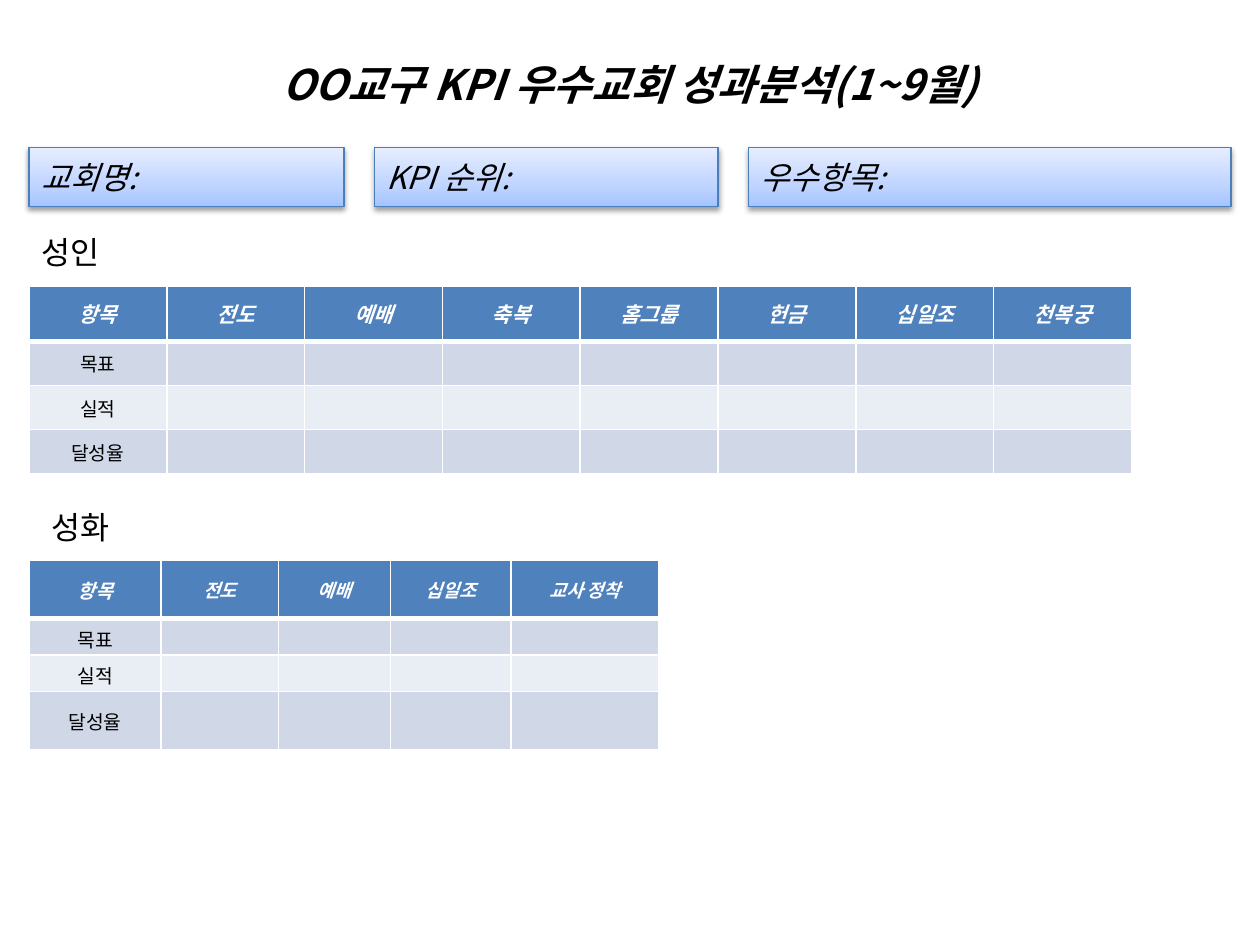
from lxml import etree
from pptx import Presentation
from pptx.dml.color import RGBColor
from pptx.enum import shapes, text
from pptx.oxml import parse_xml
from pptx.oxml import ns
from pptx.util import Pt

FONT = "Noto Sans CJK KR"
BLACK = RGBColor(0x00, 0x00, 0x00)
WHITE = RGBColor(0xFF, 0xFF, 0xFF)
BLUE = RGBColor(0x4F, 0x81, 0xBD)
OUTLINE = RGBColor(0x4B, 0x7E, 0xBC)
BAND_DARK = RGBColor(0xD0, 0xD8, 0xE8)
BAND_LIGHT = RGBColor(0xE9, 0xED, 0xF4)
GRADIENT = (
    (0, RGBColor(0xA4, 0xC4, 0xFF)),
    (35, RGBColor(0xBF, 0xD4, 0xFF)),
    (100, RGBColor(0xE6, 0xEE, 0xFF)),
)

LEFT = 16.56
BOX_GAP = 17.28
ROW_LABELS = ("목표", "실적", "달성율")


def write(tf, content, size=18, color=BLACK, bold=False, italic=False,
          align=text.PP_ALIGN.LEFT, anchor=text.MSO_ANCHOR.MIDDLE):
    tf.word_wrap = True
    tf.vertical_anchor = anchor
    p = tf.paragraphs[0]
    p.alignment = align
    r = p.add_run()
    r.text = content
    f = r.font
    f.name, f.size, f.bold, f.italic = FONT, Pt(size), bold, italic
    f.color.rgb = color
    ea = etree.SubElement(r._r.get_or_add_rPr(), ns.qn("a:ea"))
    ea.set("typeface", FONT)


def add_label(slide, content, x, y, w, h, **fmt):
    tb = slide.shapes.add_textbox(Pt(x), Pt(y), Pt(w), Pt(h))
    write(tb.text_frame, content, **fmt)


def style_box(sp):
    """Give a box its upward gradient and soft shadow below."""
    sp.fill.background()
    stops = "".join(
        f'<a:gs pos="{pos * 1000}"><a:srgbClr val="{color}"/></a:gs>'
        for pos, color in GRADIENT)
    grad = parse_xml(
        f'<a:gradFill {ns.nsdecls("a")} rotWithShape="1"><a:gsLst>{stops}</a:gsLst>'
        '<a:lin ang="16200000" scaled="0"/></a:gradFill>')
    spPr = sp._element.spPr
    spPr.replace(spPr.find(ns.qn("a:noFill")), grad)
    sp.line.color.rgb = OUTLINE
    sp.line.width = Pt(0.75)
    sp.shadow.inherit = False
    effects = spPr.find(ns.qn("a:effectLst"))
    effects.append(parse_xml(
        f'<a:outerShdw {ns.nsdecls("a")} blurRad="{Pt(3.1)}" dist="{Pt(1.6)}" '
        'dir="5400000" rotWithShape="0"><a:srgbClr val="000000">'
        '<a:alpha val="38000"/></a:srgbClr></a:outerShdw>'))


def add_info_box(slide, content, x, w):
    sp = slide.shapes.add_shape(
        shapes.MSO_SHAPE.RECTANGLE, Pt(x), Pt(84.24), Pt(w), Pt(33.84))
    style_box(sp)
    write(sp.text_frame, content, italic=True)


def set_borders(cell, top=1, bottom=1):
    tcPr = cell._tc.get_or_add_tcPr()
    for side, width in (("L", 1), ("R", 1), ("T", top), ("B", bottom)):
        tcPr.append(parse_xml(
            f'<a:ln{side} {ns.nsdecls("a")} w="{Pt(width)}"><a:solidFill>'
            f'<a:srgbClr val="{WHITE}"/></a:solidFill></a:ln{side}>'))


def add_score_table(slide, y, headers, header_sizes, widths, heights):
    frame = slide.shapes.add_table(
        len(heights), len(widths), Pt(LEFT), Pt(y), Pt(sum(widths)), Pt(sum(heights)))
    table = frame.table
    for column, w in zip(table.columns, widths):
        column.width = Pt(w)
    for row, h in zip(table.rows, heights):
        row.height = Pt(h)

    for c, (header, size) in enumerate(zip(headers, header_sizes)):
        cell = table.cell(0, c)
        set_borders(cell, bottom=3)
        cell.fill.solid()
        cell.fill.fore_color.rgb = BLUE
        cell.vertical_anchor = text.MSO_ANCHOR.MIDDLE
        write_cell(cell, header, size=size, color=WHITE, bold=True, italic=True)

    for r, label in enumerate(ROW_LABELS, 1):
        for c in range(len(headers)):
            cell = table.cell(r, c)
            set_borders(cell, top=3 if r == 1 else 1)
            cell.fill.solid()
            cell.fill.fore_color.rgb = BAND_DARK if r % 2 else BAND_LIGHT
            if c == 0:
                write_cell(cell, label, size=11)
            else:
                end = etree.SubElement(
                    cell.text_frame.paragraphs[0]._p, ns.qn("a:endParaRPr"))
                end.set("sz", "1100")


def write_cell(cell, content, **fmt):
    write(cell.text_frame, content, align=text.PP_ALIGN.CENTER, **fmt)
    cell.vertical_anchor = text.MSO_ANCHOR.MIDDLE


def main():
    prs = Presentation()
    prs.slide_width, prs.slide_height = Pt(720), Pt(540)
    slide = prs.slides.add_slide(prs.slide_layouts[6])

    add_label(slide, "OO교구 KPI 우수교회 성과분석(1~9월)", 36, 21.6, 648, 51.84,
              size=24, bold=True, italic=True, align=text.PP_ALIGN.CENTER)

    x = LEFT
    for content, w in (("교회명:", 180), ("KPI 순위:", 196.56), ("우수항목:", 275.76)):
        add_info_box(slide, content, x, w)
        x += w + BOX_GAP

    add_score_table(
        slide, 163.44,
        ("항목", "전도", "예배", "축복", "홈그룹", "헌금", "십일조", "천복궁"),
        [12] * 8, [78.75] * 8, (31.68, 25.2, 25.2, 25.2))
    add_score_table(
        slide, 320.4,
        ("항목", "전도", "예배", "십일조", "교사 정착"),
        [11] + [10.5] * 4, (75.6, 67, 64, 69, 84.4), (33.12, 20.88, 20.88, 33.12))

    for content, x, y in (("성인", LEFT, 129.6), ("성화", 22.32, 286.56)):
        add_label(slide, content, x, y, 135.36, 28.8, anchor=text.MSO_ANCHOR.TOP)

    prs.save("out.pptx")


if __name__ == "__main__":
    main()
